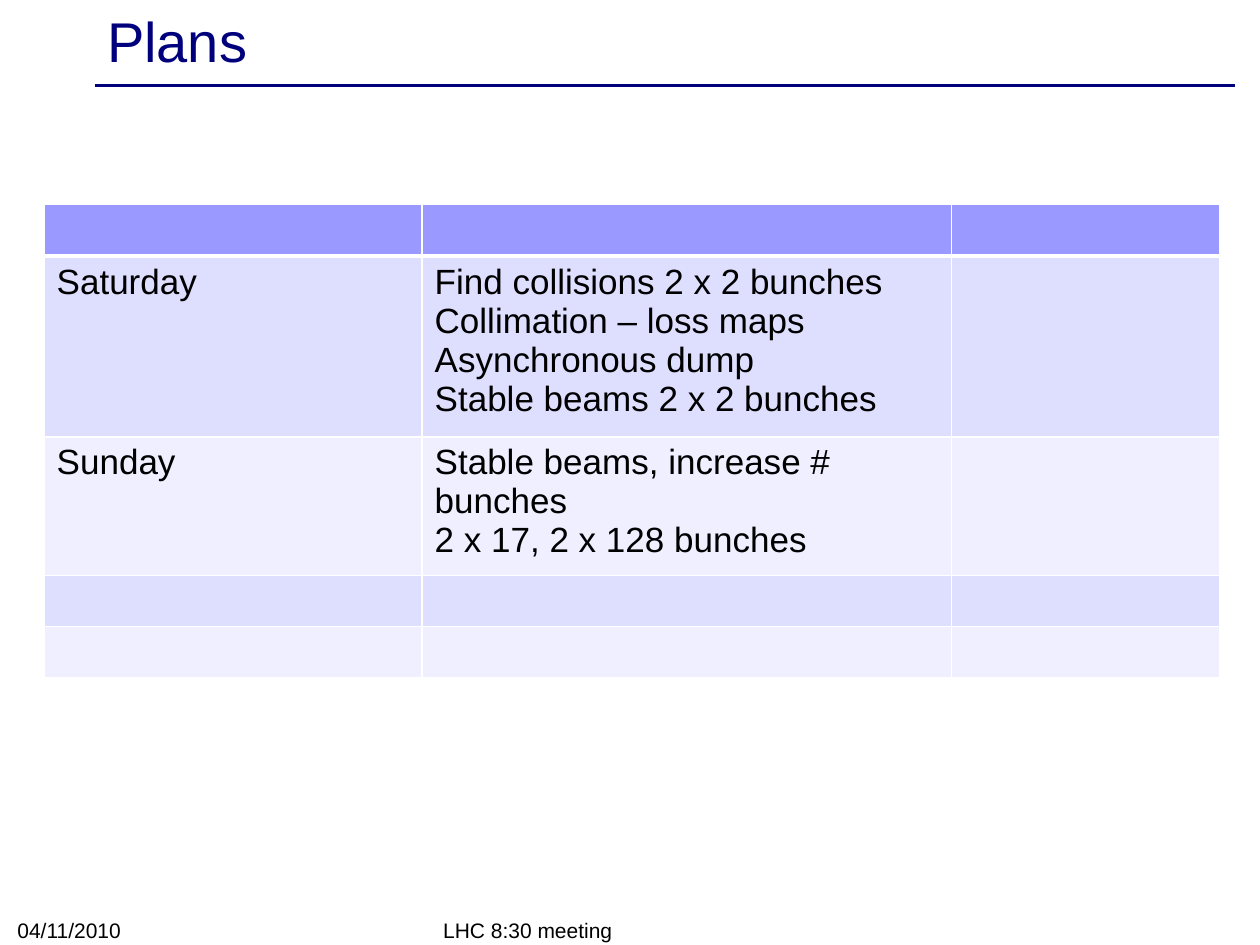
from lxml.etree import SubElement
from pptx import Presentation
from pptx.dml.color import RGBColor
from pptx.enum.shapes import MSO_CONNECTOR
from pptx.enum.text import MSO_ANCHOR, PP_ALIGN
from pptx.oxml.ns import qn
from pptx.util import Pt

COLOURS = {
    "navy": "00007D",
    "black": "000000",
    "white": "FFFFFF",
    "header": "9999FF",
    "odd": "DEDEFF",
    "even": "EFEFFF",
}
TITLE_FONT = {"name": "Arial", "size": Pt(32), "bold": False}
TABLE_FONT = {"name": "Arial", "size": Pt(20), "bold": False}
FOOTER_FONT = {"name": "Arial", "size": Pt(12), "bold": False}

COLUMN_WIDTHS = [216, 302.4, 153.4]
ROW_HEIGHTS = [29.5, 96.3, 74.3, 29.2, 29.2]
PLANS = {
    1: (
        ["Saturday"],
        [
            "Find collisions 2 x 2 bunches\vCollimation – loss maps",
            "Asynchronous dump",
            "Stable beams 2 x 2 bunches",
        ],
    ),
    2: (["Sunday"], ["Stable beams, increase # bunches", "2 x 17, 2 x 128 bunches"]),
}


def colour(name):
    """Return the named colour."""
    return RGBColor.from_string(COLOURS[name])


def write(frame, lines, font, colour_name):
    """Fill a text frame with left-aligned paragraphs in one format."""
    frame.word_wrap = True
    for index, line in enumerate(lines):
        para = frame.add_paragraph() if index else frame.paragraphs[0]
        para.text = line
        para.alignment = PP_ALIGN.LEFT
        for key, value in font.items():
            setattr(para.font, key, value)
        para.font.color.rgb = colour(colour_name)


def place_title(page, left, top, width, height):
    """Place the title and the rule below it."""
    title = page.shapes.title
    box = {"left": left, "top": top, "width": width, "height": height}
    for key, value in box.items():
        setattr(title, key, Pt(value))
    title.text_frame.vertical_anchor = MSO_ANCHOR.MIDDLE
    write(title.text_frame, ["Plans"], TITLE_FONT, "navy")

    rule_top = Pt(top + height + 5.8)
    rule = page.shapes.add_connector(
        MSO_CONNECTOR.STRAIGHT, Pt(left), rule_top, Pt(left + width + 3.6), rule_top
    )
    rule.line.color.rgb = colour("navy")
    rule.line.width = Pt(2)
    SubElement(rule._element.spPr, qn("a:effectLst"))


def add_borders(cell, row):
    """Draw white cell borders, thick between the header and the body."""
    properties = cell._tc.get_or_add_tcPr()
    widths = {"L": 1, "R": 1, "T": 3 if row == 1 else 1, "B": 3 if row == 0 else 1}
    for side, width in widths.items():
        line = SubElement(properties, qn(f"a:ln{side}"), w=str(Pt(width)))
        fill = SubElement(line, qn("a:solidFill"))
        SubElement(fill, qn("a:srgbClr"), val=COLOURS["white"])


def place_plans(page, left, top):
    """Place the table of daily plans."""
    table = page.shapes.add_table(
        len(ROW_HEIGHTS), len(COLUMN_WIDTHS), Pt(left), Pt(top),
        Pt(sum(COLUMN_WIDTHS)), Pt(sum(ROW_HEIGHTS)),
    ).table
    for column, width in zip(table.columns, COLUMN_WIDTHS):
        column.width = Pt(width)
    for row, height in enumerate(ROW_HEIGHTS):
        table.rows[row].height = Pt(height)
        band = "header" if row == 0 else "odd" if row % 2 else "even"
        for cell in table.rows[row].cells:
            add_borders(cell, row)
            cell.fill.solid()
            cell.fill.fore_color.rgb = colour(band)
        for column, lines in enumerate(PLANS.get(row, ())):
            write(table.cell(row, column).text_frame, lines, TABLE_FONT, "black")


def place_footer(page, text, left, top, width, height):
    """Place one footer text on the bottom of its box."""
    box = page.shapes.add_textbox(Pt(left), Pt(top), Pt(width), Pt(height))
    box.text_frame.vertical_anchor = MSO_ANCHOR.BOTTOM
    write(box.text_frame, [text], FOOTER_FONT, "black")


def main():
    """Build the deck and save it."""
    deck = Presentation()
    deck.slide_width, deck.slide_height = Pt(720), Pt(540)
    page = deck.slides.add_slide(deck.slide_layouts.get_by_name("Title Only"))
    place_title(page, 54, 2.2, 648, 41)
    place_footer(page, "LHC 8:30 meeting", 246.2, 522, 228.2, 20.2)
    place_footer(page, "04/11/2010", 2.9, 521.3, 167.8, 20.9)
    place_plans(page, 25.2, 116.9)
    deck.save("out.pptx")


if __name__ == "__main__":
    main()
